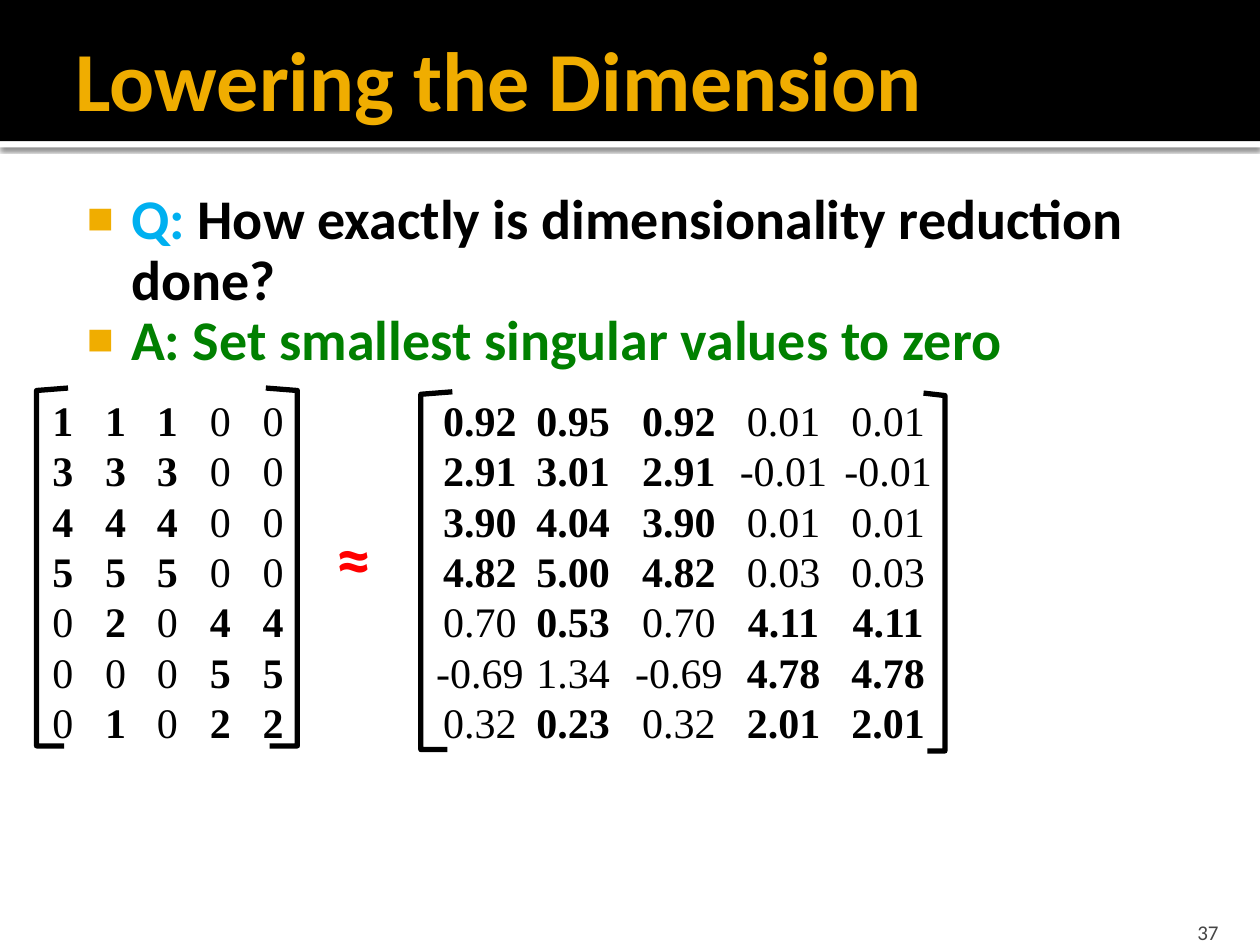
from lxml.etree import SubElement
from pptx import Presentation
from pptx.dml.color import RGBColor
from pptx.enum.shapes import MSO_SHAPE
from pptx.enum.text import MSO_ANCHOR, MSO_AUTO_SIZE, PP_ALIGN
from pptx.oxml import parse_xml
from pptx.oxml.ns import nsdecls, qn
from pptx.util import Inches, Pt

COLORS = {"gold": "F0AD00", "sky": "00B0F0", "green": "008000", "red": "FF0000",
          "black": "000000", "white": "FFFFFF", "gray": "454545"}
TITLE = "Lowering the Dimension"
BULLETS = [
    [("Q:", "sky"), (" How exactly is dimensionality reduction done?", "black")],
    [("A: Set smallest singular values to zero", "green")],
]
RATINGS = [
    "1 1 1 0 0",
    "3 3 3 0 0",
    "4 4 4 0 0",
    "5 5 5 0 0",
    "0 2 0 4 4",
    "0 0 0 5 5",
    "0 1 0 2 2",
]
APPROXIMATION = [
    "0.92 0.95 0.92 0.01 0.01",
    "2.91 3.01 2.91 -0.01 -0.01",
    "3.90 4.04 3.90 0.01 0.01",
    "4.82 5.00 4.82 0.03 0.03",
    "0.70 0.53 0.70 4.11 4.11",
    "-0.69 1.34 -0.69 4.78 4.78",
    "0.32 0.23 0.32 2.01 2.01",
]
MATRICES = [
    {"rows": RATINGS, "box": (0.25, 3.08, 2.17, 2.93), "centers": [0.15, 0.57, 0.98, 1.4, 1.82]},
    {"rows": APPROXIMATION, "box": (3.33, 3.08, 4.75, 2.93), "centers": [0.38, 1.12, 1.96, 2.79, 3.62]},
]
BRACKETS = [  # side x, upper tip x, lower tip x, top
    (0.29, 0.54, 0.51, 3.08),
    (2.36, 2.11, 2.14, 3.08),
    (3.34, 3.59, 3.55, 3.11),
    (7.5, 7.33, 7.36, 3.12),
]
BANDS = [((0, 1.12, 10, 0.05), "white"), ((0, 0, 10, 1.12), "black")]
SHADOW = (f'<a:effectLst {nsdecls("a")}><a:outerShdw blurRad="{Pt(2.5)}" dist="{Pt(0.8)}" '
          'dir="5400000"><a:srgbClr val="000000"><a:alpha val="60000"/></a:srgbClr>'
          '</a:outerShdw></a:effectLst>')


def apply(target, **values):
    for name, value in values.items():
        setattr(target, name, value)


def place(shape, box):
    apply(shape, **dict(zip(("left", "top", "width", "height"), map(Inches, box))))


def frame_text(shape, insets=(0.1, 0.05, 0.1, 0.05), **values):
    sides = ("margin_left", "margin_top", "margin_right", "margin_bottom")
    frame = shape.text_frame
    apply(frame, **dict(zip(sides, map(Inches, insets))))
    apply(frame, **{"word_wrap": True, "auto_size": MSO_AUTO_SIZE.NONE, **values})
    return frame


def add_run(paragraph, text, color, size, bold=True, font="Calibri"):
    run = paragraph.add_run()
    run.text = text
    apply(run.font, name=font, size=Pt(size), bold=bold)
    run.font.color.rgb = RGBColor.from_string(COLORS[color])


def next_paragraph(frame, index):
    return frame.add_paragraph() if index else frame.paragraphs[0]


def add_bands(slide):
    for index, (box, color) in enumerate(BANDS):
        band = slide.shapes.add_shape(MSO_SHAPE.RECTANGLE, *map(Inches, box))
        band.fill.solid()
        band.fill.fore_color.rgb = RGBColor.from_string(COLORS[color])
        band.line.fill.background()
        band.shadow.inherit = False
        if color == "white":
            properties = band._element.spPr
            properties.replace(properties.find(qn("a:effectLst")), parse_xml(SHADOW))
        slide.shapes._spTree.insert(2 + index, band._element)


def fill_title(title):
    place(title, (0.5, 0.08, 9.5, 1.08))
    frame = frame_text(title, (0.1, 0.05, 0.05, 0.05), vertical_anchor=MSO_ANCHOR.MIDDLE)
    frame.paragraphs[0].alignment = PP_ALIGN.LEFT
    add_run(frame.paragraphs[0], TITLE, "gold", 48)


def fill_bullets(body):
    place(body, (0.5, 1.42, 9.33, 5.75))
    frame = frame_text(body, (0.06, 0.1, 0.1, 0.05))
    for index, pieces in enumerate(BULLETS):
        paragraph = next_paragraph(frame, index)
        apply(paragraph, line_spacing=0.9, space_before=Pt(0))
        properties = paragraph._p.get_or_add_pPr()
        properties.set("marL", str(Inches(0.48)))
        properties.set("indent", str(Inches(-0.35)))
        bullet_color = SubElement(properties, qn("a:buClr"))
        SubElement(bullet_color, qn("a:srgbClr"), val=COLORS["gold"])
        SubElement(properties, qn("a:buSzPct"), val="80000")
        SubElement(properties, qn("a:buChar"), char="■")
        for text, color in pieces:
            add_run(paragraph, text, color, 32)


def add_matrix(slide, rows, box, centers):
    frame = frame_text(slide.shapes.add_textbox(*map(Inches, box)))
    for index, (row, ratings) in enumerate(zip(rows, RATINGS)):
        paragraph = next_paragraph(frame, index)
        paragraph.line_spacing = Pt(28.8)
        tabs = SubElement(paragraph._p.get_or_add_pPr(), qn("a:tabLst"))
        for center in centers:
            SubElement(tabs, qn("a:tab"), pos=str(Inches(center)), algn="ctr")
        for value, rating in zip(row.split(), ratings.split()):
            add_run(paragraph, "\t" + value, "black", 24, rating != "0", "Times New Roman")


def add_bracket(slide, side, upper, lower, top):
    points = [(upper, top), (side, top + 0.02), (side, top + 2.84), (lower, top + 2.84)]
    corners = [(Inches(x), Inches(y)) for x, y in points]
    builder = slide.shapes.build_freeform(*corners[0])
    builder.add_line_segments(corners[1:], close=False)
    bracket = builder.convert_to_shape()
    bracket.fill.background()
    bracket.shadow.inherit = False
    bracket.line.color.rgb = RGBColor.from_string(COLORS["black"])
    bracket.line.width = Pt(3)


def main():
    """Build the slide on lowering the dimension and save it."""
    deck = Presentation()
    apply(deck, slide_width=Inches(10), slide_height=Inches(7.5))
    slide = deck.slides.add_slide(deck.slide_layouts[1])
    add_bands(slide)
    fill_title(slide.shapes.title)
    fill_bullets(slide.placeholders[1])
    for matrix in MATRICES:
        add_matrix(slide, **matrix)
    for bracket in BRACKETS:
        add_bracket(slide, *bracket)

    approx = slide.shapes.add_textbox(*map(Inches, (2.57, 4.03, 0.51, 0.77)))
    frame = frame_text(approx, word_wrap=False, vertical_anchor=MSO_ANCHOR.MIDDLE)
    add_run(frame.paragraphs[0], "≈", "red", 40)

    number = slide.shapes.add_textbox(*map(Inches, (8.97, 7.2, 0.8, 0.3)))
    frame = frame_text(number, (0.1, 0.05, 0.1, 0), vertical_anchor=MSO_ANCHOR.BOTTOM)
    frame.paragraphs[0].alignment = PP_ALIGN.RIGHT
    add_run(frame.paragraphs[0], "37", "gray", 12, False)
    deck.save("out.pptx")


if __name__ == "__main__":
    main()
